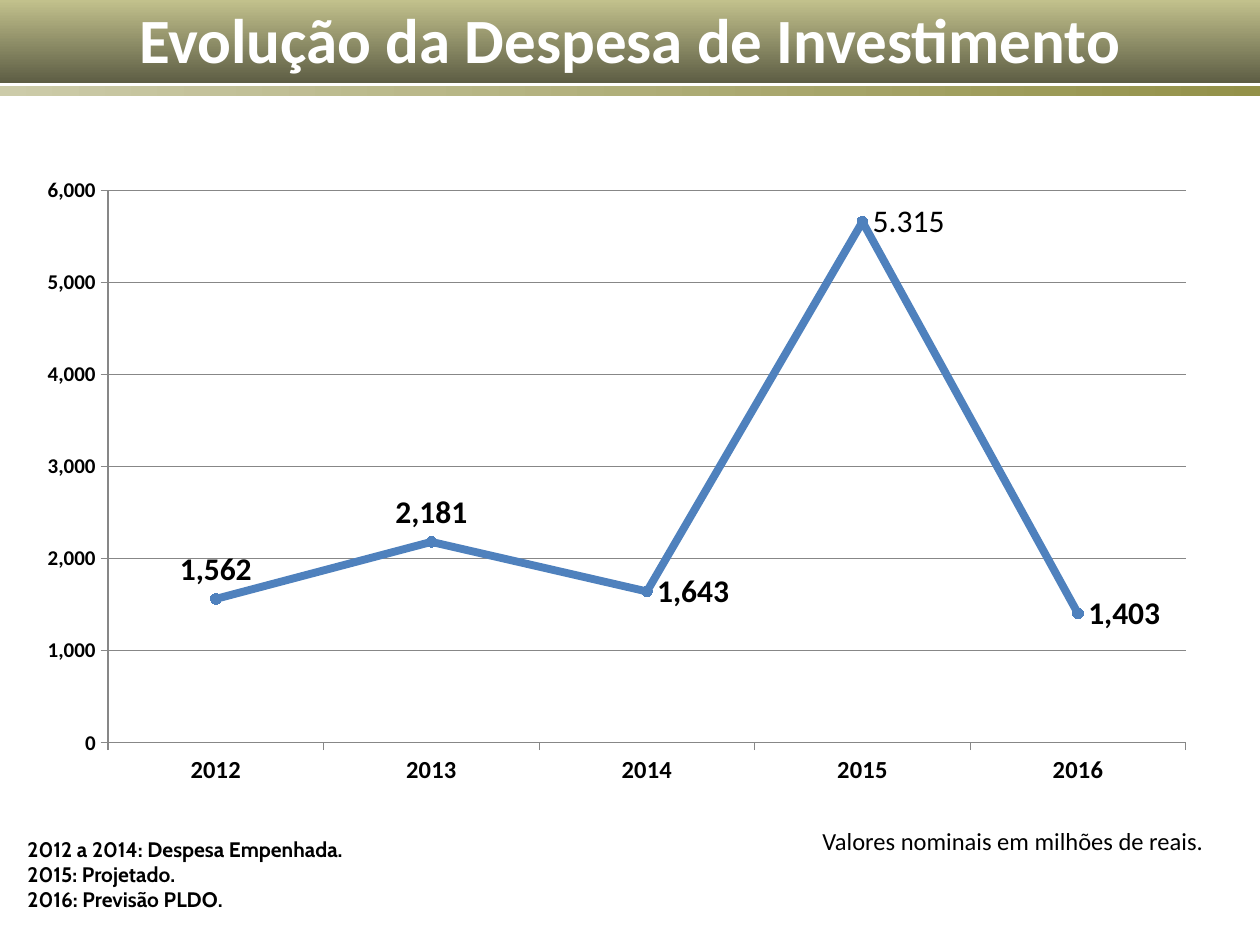
from lxml import etree
from pptx import Presentation
from pptx.chart.data import CategoryChartData
from pptx.dml.color import RGBColor
from pptx.enum import chart as ch, shapes, text
from pptx.oxml import parse_xml
from pptx.oxml.ns import nsdecls
from pptx.util import Inches, Pt

COLORS = {
    "black": "000000", "white": "FFFFFF", "line": "4F81BD", "grid": "878787",
    "title_top": "CAC992", "title_bottom": "5D5D44",
    "strip_left": "CCCBA9", "strip_right": "939149",
}
TITLE = "Evolução da Despesa de Investimento"
NOTES = ["2012 a 2014: Despesa Empenhada.", "2015: Projetado.", "2016: Previsão PLDO."]
UNITS = "Valores nominais em milhões de reais."
SPENDING = {"2012": 1562, "2013": 2181, "2014": 1643, "2015": 5658, "2016": 1403}
RIGHT_LABELS = {2: None, 3: "5.315", 4: None}  # point index: text replacing the value
PLOT_AREA = {"x": 0.07, "y": 0.04, "w": 0.91, "h": 0.87}  # fractions of the chart


def rgb(name):
    return RGBColor.from_string(COLORS[name])


def style(font, size, bold=False, color="black", name="Calibri"):
    font.size, font.bold, font.name = Pt(size), bold, name
    font.color.rgb = rgb(color)


def fill_gradient(sp, start, end, angle):
    sp.fill.gradient()
    sp.fill.gradient_angle = angle
    for stop, color, position in zip(sp.fill.gradient_stops, (start, end), (0, 1)):
        stop.color.rgb = rgb(color)
        stop.position = position
    sp.line.fill.background()


def add_text(s, box, lines, align, **font):
    tf = s.shapes.add_textbox(*map(Inches, box)).text_frame
    tf.word_wrap = True
    tf.text = "\n".join(lines)
    for p in tf.paragraphs:
        p.alignment = align
        style(p.runs[0].font, **font)


def add_title(s):
    sp = s.shapes.title
    sp.left, sp.top, sp.width, sp.height = map(Inches, (0, -0.05, 10, 0.71))
    fill_gradient(sp, "title_top", "title_bottom", 270)
    tf = sp.text_frame
    tf.text = TITLE
    tf.auto_size = text.MSO_AUTO_SIZE.NONE
    tf.vertical_anchor = text.MSO_ANCHOR.MIDDLE
    tf.paragraphs[0].alignment = text.PP_ALIGN.CENTER
    style(tf.paragraphs[0].runs[0].font, 36, True, "white")


def add_strip(s):
    sp = s.shapes.add_shape(shapes.MSO_SHAPE.RECTANGLE, *map(Inches, (0, 0.68, 10, 0.08)))
    sp.shadow.inherit = False
    fill_gradient(sp, "strip_left", "strip_right", 0)


def set_plot_area(chart):
    """Fix the inner plot area, which python-pptx has no method for."""
    edges = "".join(f'<c:{k} val="{v}"/>' for k, v in PLOT_AREA.items())
    layout = parse_xml(
        f'<c:layout {nsdecls("c")}><c:manualLayout><c:layoutTarget val="inner"/>'
        f'<c:xMode val="edge"/><c:yMode val="edge"/>{edges}</c:manualLayout></c:layout>')
    plot_area = chart._chartSpace.chart.plotArea
    for old in plot_area.findall(etree.QName(layout).text):
        plot_area.remove(old)
    plot_area.insert(0, layout)


def format_axes(chart):
    value, category = chart.value_axis, chart.category_axis
    value.minimum_scale, value.maximum_scale, value.major_unit = 0, 6000, 1000
    value.tick_labels.number_format = "#,##0"
    value.tick_labels.number_format_is_linked = False
    value.has_major_gridlines = True
    value.major_gridlines.format.line.color.rgb = rgb("grid")
    value.major_gridlines.format.line.width = Pt(0.75)
    for axis, size in ((value, 12), (category, 14)):
        axis.major_tick_mark = ch.XL_TICK_MARK.OUTSIDE
        axis.format.line.color.rgb = rgb("grid")
        axis.format.line.width = Pt(0.75)
        style(axis.tick_labels.font, size, True)


def format_series(series):
    series.smooth = False
    series.format.line.color.rgb = rgb("line")
    series.format.line.width = Pt(4.5)
    series.marker.style = ch.XL_MARKER_STYLE.CIRCLE
    series.marker.size = 6
    series.marker.format.fill.solid()
    series.marker.format.fill.fore_color.rgb = rgb("line")
    series.marker.format.line.color.rgb = rgb("line")

    labels = series.data_labels
    labels.show_value = True
    labels.position = ch.XL_LABEL_POSITION.ABOVE
    labels.number_format, labels.number_format_is_linked = "#,##0", False
    style(labels.font, 18, True)
    for i, custom in RIGHT_LABELS.items():
        label = series.points[i].data_label
        if custom:
            label.text_frame.text = custom
            style(label.text_frame.paragraphs[0].runs[0].font, 18)
        else:
            style(label.font, 18, True)
        label.position = ch.XL_LABEL_POSITION.RIGHT


def add_spending_chart(s):
    data = CategoryChartData(number_format="#,##0")
    data.categories = list(SPENDING)
    data.add_series("Series 1", list(SPENDING.values()))
    box = map(Inches, (0.2, 1.31, 9.4, 5.04))
    chart = s.shapes.add_chart(ch.XL_CHART_TYPE.LINE_MARKERS, *box, data).chart
    chart.has_legend = chart.has_title = False
    chart.plots[0].vary_by_categories = False
    style(chart.font, 10)
    set_plot_area(chart)
    format_axes(chart)
    format_series(chart.plots[0].series[0])


def main():
    prs = Presentation()
    prs.slide_width, prs.slide_height = Inches(10), Inches(7.5)
    s = prs.slides.add_slide(prs.slide_layouts[5])
    add_title(s)
    add_text(s, (0.12, 6.59, 8.03, 0.71), NOTES, text.PP_ALIGN.JUSTIFY,
             size=12, bold=True, name="Cabin")
    add_text(s, (6.22, 6.51, 3.43, 0.34), [UNITS], text.PP_ALIGN.RIGHT, size=14)
    add_spending_chart(s)
    add_strip(s)
    prs.save("out.pptx")


if __name__ == "__main__":
    main()
